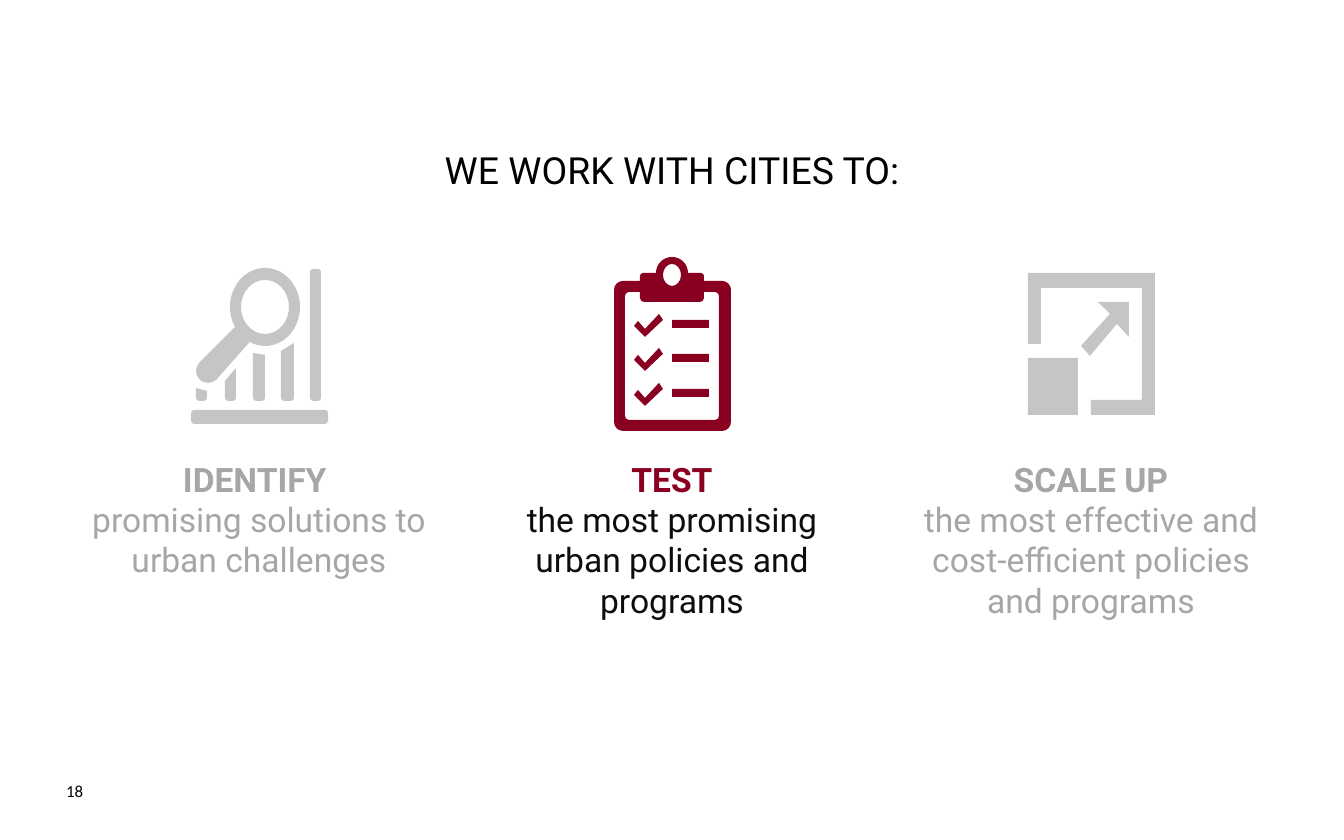
from math import cos, radians, sin, tan

from lxml import etree
from pptx import Presentation
from pptx import util as u
from pptx.dml.color import RGBColor
from pptx.enum import text
from pptx.oxml import ns

SCALE = 914400 / 134.4
BLACK = RGBColor(0x00, 0x00, 0x00)
INK = RGBColor(0x0D, 0x0D, 0x0D)
CRIMSON = RGBColor(0x8A, 0x00, 0x21)
MUTED = RGBColor(0xA6, 0xA6, 0xA6)
SLATE = RGBColor(0x59, 0x59, 0x59)


def emu(px):
    return u.Emu(round(px * SCALE))


def lines(*points):
    return [(point,) for point in points]


def arc(x, y, rx, ry, start=0, end=360):
    low, high = sorted((start, end))
    turns = [a for a in range(-360, 721, 90) if low < a < high]
    stops = [low, *turns, high]
    if end < start:
        stops.reverse()

    def at(angle, reach=0):
        a = radians(angle)
        return (x + rx * (cos(a) - reach * sin(a)), y + ry * (sin(a) + reach * cos(a)))

    steps = lines(at(start))
    for a, b in zip(stops, stops[1:]):
        reach = 4 / 3 * tan(radians(b - a) / 4)
        steps.append((at(a, reach), at(b, -reach), at(b)))
    return steps


def corner(x, y, radius, start, end):
    return arc(x, y, radius, radius, start, end)


def rect(x, y, width, height):
    return lines((x, y), (x + width, y), (x + width, y + height), (x, y + height))


def bar(left, right, top_left, top_right, bottom=401, radius=3):
    return [
        *lines((left, top_left), (right, top_right)),
        *corner(right - radius, bottom - radius, radius, 0, 90),
        *corner(left + radius, bottom - radius, radius, 90, 180),
    ]


def rounded(x, y, width, height, radius):
    right, bottom = x + width - radius, y + height - radius
    return [
        *corner(x + radius, y + radius, radius, 180, 270),
        *corner(right, y + radius, radius, 270, 360),
        *corner(right, bottom, radius, 0, 90),
        *corner(x + radius, bottom, radius, 90, 180),
    ]


def magnifier_chart():
    return [
        arc(265, 307, 35, 39, 149, 476) + corner(208, 371, 12, 45, 225),
        arc(265, 307, 24, 27),
        rounded(310, 269, 11, 132, 3),
        rounded(191, 410, 137, 14, 3),
        bar(196, 207, 388, 391),
        bar(225, 236, 381, 368),
        bar(253, 265, 353, 355),
        bar(281, 294, 351, 343),
    ]


def clipboard():
    board = [
        *corner(623, 290, 9, 180, 270), *lines((640, 281)),
        *corner(643, 276, 3, 180, 270), *corner(672, 273, 16, 180, 360),
        *corner(701, 276, 3, 270, 360), *lines((704, 281)),
        *corner(722, 290, 9, 270, 360), *corner(722, 422, 9, 0, 90),
        *corner(623, 422, 9, 90, 180),
    ]
    sheet = [
        *corner(629, 296, 4, 180, 270), *lines((640, 292)),
        *corner(644, 298, 4, 180, 90), *corner(700, 298, 4, 90, 0),
        *lines((704, 292)), *corner(715, 296, 4, 270, 360),
        *corner(715, 416, 4, 0, 90), *corner(629, 416, 4, 90, 180),
    ]
    tick = [(645, 329), (638, 321), (634, 326), (645, 337), (663, 320), (659, 314)]
    contours = [board, arc(672, 275, 9, 11), sheet]
    for drop in (0, 34, 69):
        contours.append(lines(*[(x, y + drop) for x, y in tick]))
        contours.append(rect(672, 320 + drop, 37, 8))
    return contours


def expanding_square():
    frame = lines(
        (1028, 273), (1028, 344), (1041, 344), (1041, 288), (1142, 288),
        (1142, 400), (1091, 400), (1091, 415), (1155, 415), (1155, 273),
    )
    arrow = lines(
        (1129, 337), (1129, 302), (1098, 302), (1110, 314),
        (1081, 346), (1090, 356), (1117, 324),
    )
    return [frame, arrow, rect(1028, 358, 50, 57)]


class SlideWriter:
    def __init__(self, page, font="Roboto"):
        self.page = page
        self.font = font

    def text(self, x, y, width, height, rows, size, font=None,
             align=text.PP_ALIGN.CENTER, wrap=True):
        box = self.page.shapes.add_textbox(emu(x), emu(y), emu(width), emu(height))
        frame = box.text_frame
        frame.word_wrap = wrap
        for index, (words, color, bold) in enumerate(rows):
            para = frame.add_paragraph() if index else frame.paragraphs[0]
            para.alignment = align
            span = para.add_run()
            span.text = words
            span.font.name = font or self.font
            span.font.size = u.Pt(size)
            span.font.bold = bold
            span.font.color.rgb = color

    def icon(self, contours, color, opacity=100):
        outlines = [[[(emu(x), emu(y)) for x, y in step] for step in contour]
                    for contour in contours]
        builder = self.page.shapes.build_freeform(*outlines[0][0][-1])
        for index, outline in enumerate(outlines):
            if index:
                builder.move_to(*outline[0][-1])
            builder.add_line_segments([step[-1] for step in outline[1:]], close=True)
        shape = builder.convert_to_shape()
        self.curve(shape, [step for outline in outlines for step in outline[1:]])
        shape.shadow.inherit = False
        shape.line.fill.background()
        shape.fill.solid()
        shape.fill.fore_color.rgb = color
        if opacity < 100:
            tint = shape.element.spPr.find(ns.qn("a:solidFill"))[0]
            etree.SubElement(tint, ns.qn("a:alpha"), val=str(opacity * 1000))

    def curve(self, shape, steps):
        segments = list(shape.element.spPr.iter(ns.qn("a:lnTo")))
        for segment, step in zip(segments, steps):
            if len(step) == 3:
                segment.tag = ns.qn("a:cubicBezTo")
                for place, (x, y) in enumerate(step[:2]):
                    control = etree.Element(ns.qn("a:pt"), x=str(x - shape.left),
                                            y=str(y - shape.top))
                    segment.insert(place, control)


def main():
    deck = Presentation()
    deck.slide_width, deck.slide_height = emu(1344), emu(840)
    writer = SlideWriter(deck.slides.add_slide(deck.slide_layouts[6]))

    writer.text(53, 774, 48, 34, [("18", BLACK, False)], 9, font="Calibri",
                align=text.PP_ALIGN.LEFT, wrap=False)
    writer.text(409, 141, 526, 59, [("WE WORK WITH CITIES TO:", BLACK, False)], 20)

    steps = [
        (66, 136, magnifier_chart(), SLATE, 35, "IDENTIFY ", MUTED,
         "promising solutions to urban challenges", MUTED),
        (479, 176, clipboard(), CRIMSON, 100, "TEST", CRIMSON,
         "the most promising urban policies and programs", INK),
        (898, 176, expanding_square(), SLATE, 35, "SCALE UP", MUTED,
         "the most effective and cost-efficient policies and programs", MUTED),
    ]
    for x, height, contours, fill, opacity, heading, accent, words, color in steps:
        writer.icon(contours, fill, opacity)
        writer.text(x, 452, 386, height,
                    [(heading, accent, True), (words, color, False)], 18)

    deck.save("out.pptx")


if __name__ == "__main__":
    main()
